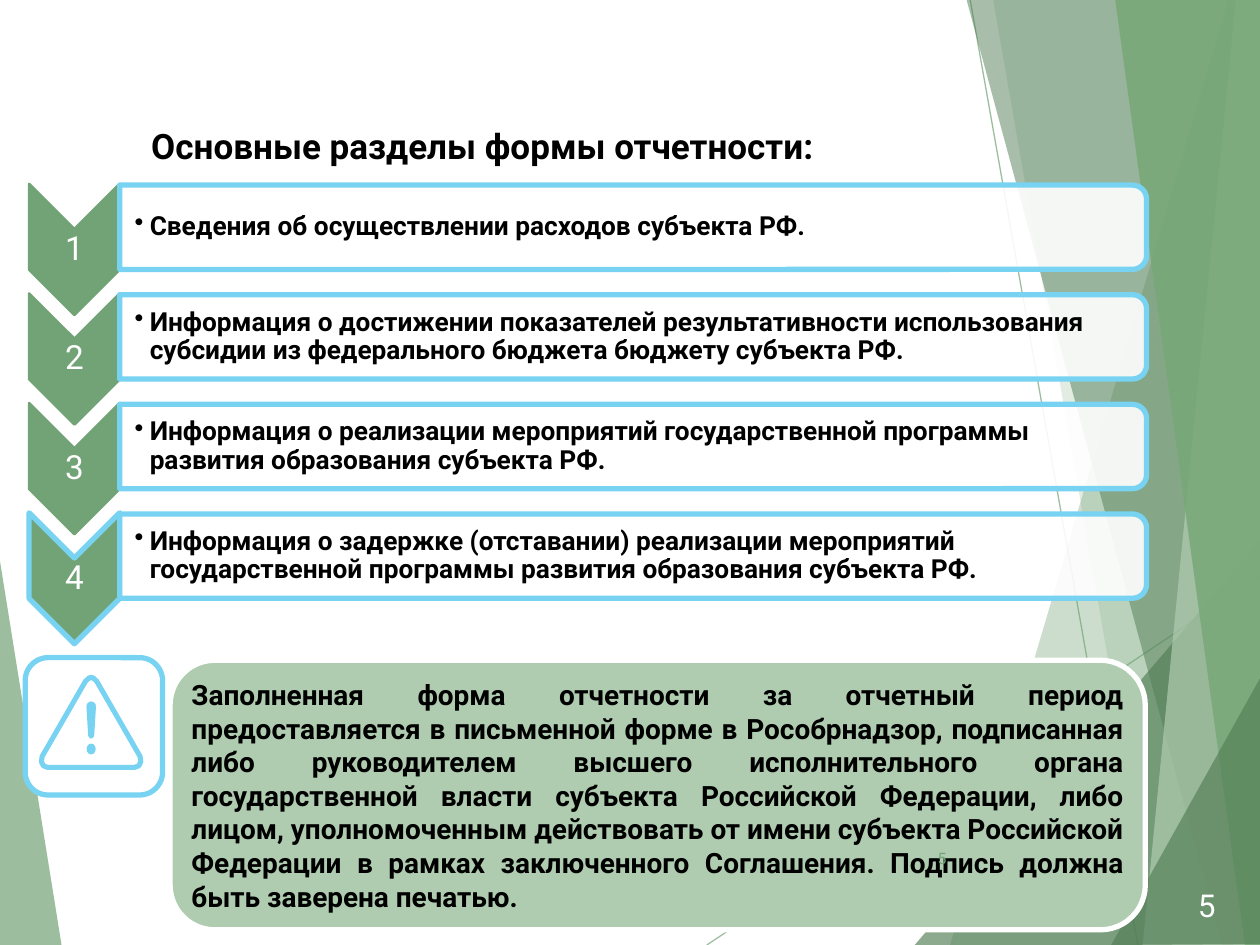
from pptx import Presentation
from pptx.dml.color import RGBColor
from pptx.enum.shapes import MSO_CONNECTOR, MSO_SHAPE
from pptx.enum.text import MSO_ANCHOR, PP_ALIGN
from pptx.oxml.ns import qn
from pptx.util import Pt
from lxml.etree import SubElement

FONT = "Roboto"
GREEN, DARK, PALE, LEAF = "72A376", "527E56", "B0CCB0", "76A776"
SKY, WHITE, BLACK = "77D3F1", "FFFFFF", "000000"

FACETS = [  # corner points, colour, opacity in percent
    ([(-0.7, 316.1), (35.3, 540.7), (-0.7, 540)], GREEN, 70),
    ([(702, 0), (542.9, 540), (721.4, 540.7), (720.7, 0.7)], GREEN, 36),
    ([(567.4, -0.7), (661.7, 540), (720.7, 540), (720.7, -0.7)], GREEN, 20),
    ([(522.7, 540), (720, 308.9), (720.7, 540)], DARK, 66),
    ([(552.2, -0.7), (698.4, 540), (720.7, 539.3), (720.7, -0.7)], DARK, 50),
    ([(706.3, -0.7), (653, 540), (720.7, 540), (720, -0.7)], PALE, 70),
    ([(637.2, -0.7), (711.4, 540), (721.4, 540), (720, -0.7)], LEAF, 82),
    ([(635, 540), (721.4, 385.2), (721.4, 539.3)], DARK, 66),
]
RAYS = [(403.9, 540, 720.7, 329), (554.4, 0, 650.2, 540)]

SECTIONS = [
    "Сведения об осуществлении расходов субъекта РФ.",
    "Информация о достижении показателей результативности использования "
    "субсидии из федерального бюджета бюджету субъекта РФ.",
    "Информация о реализации мероприятий государственной программы "
    "развития образования субъекта РФ.",
    "Информация о задержке (отставании) реализации мероприятий "
    "государственной программы развития образования субъекта РФ.",
]
NOTICE = (
    "Заполненная форма отчетности за отчетный период предоставляется в письменной "
    "форме в Рособрнадзор, подписанная либо руководителем высшего исполнительного "
    "органа государственной власти субъекта Российской Федерации, либо лицом, "
    "уполномоченным действовать от имени субъекта Российской Федерации в рамках "
    "заключенного Соглашения. Подпись должна быть заверена печатью."
)


def rgb(value):
    return RGBColor.from_string(value)


def set_opacity(shape, percent):
    """Apply opacity to every colour set so far on the shape."""
    for color in shape.element.spPr.iter(qn("a:srgbClr")):
        SubElement(color, qn("a:alpha")).set("val", str(percent * 1000))


def paint(shape, fill=None, line=None, width=3, opacity=100):
    shape.shadow.inherit = False
    if fill:
        shape.fill.solid()
        shape.fill.fore_color.rgb = rgb(fill)
        if opacity < 100:
            set_opacity(shape, opacity)
    else:
        shape.fill.background()
    if line:
        shape.line.color.rgb = rgb(line)
        shape.line.width = Pt(width)
    else:
        shape.line.fill.background()
    return shape


def add_box(page, kind, left, top, width, height):
    return page.shapes.add_shape(kind, Pt(left), Pt(top), Pt(width), Pt(height))


def add_turned(page, kind, left, top, width, height):
    """Add a shape turned by 90 degrees that fills the given box."""
    shift = (width - height) / 2
    shape = add_box(page, kind, left + shift, top - shift, height, width)
    shape.rotation = 90
    return shape


def add_polygon(page, points):
    first, *others = [(Pt(x), Pt(y)) for x, y in points]
    builder = page.shapes.build_freeform(*first)
    builder.add_line_segments(others, close=True)
    return builder.convert_to_shape()


def write(shape, text, size, color=BLACK, bold=False, align=PP_ALIGN.LEFT,
          anchor=MSO_ANCHOR.MIDDLE, insets=(7.2, 3.6, 7.2, 3.6), wrap=True):
    frame = shape.text_frame
    frame.word_wrap = wrap
    frame.vertical_anchor = anchor
    (frame.margin_left, frame.margin_top,
     frame.margin_right, frame.margin_bottom) = map(Pt, insets)
    para = frame.paragraphs[0]
    para.alignment = align
    span = para.add_run()
    span.text = text
    span.font.name, span.font.size, span.font.bold = FONT, Pt(size), bold
    span.font.color.rgb = rgb(color)
    return para


def add_text(page, box, text, size, **style):
    left, top, width, height = map(Pt, box)
    return write(page.shapes.add_textbox(left, top, width, height), text, size, **style)


def add_bullet(para, indent):
    props = para._p.get_or_add_pPr()
    props.set("marL", str(Pt(indent)))
    props.set("indent", str(-Pt(indent)))
    SubElement(props, qn("a:buChar")).set("char", "•")


def draw_backdrop(page):
    def draw_facets(facets):
        for points, color, opacity in facets:
            paint(add_polygon(page, points), color, opacity=opacity)

    draw_facets(FACETS[:1])
    for ray in RAYS:
        line = page.shapes.add_connector(MSO_CONNECTOR.STRAIGHT, *map(Pt, ray))
        line.line.color.rgb = rgb(GREEN)
        line.line.width = Pt(0.75)
        set_opacity(line, 70)
        SubElement(line.element.spPr, qn("a:effectLst"))
    draw_facets(FACETS[1:])


def place_title(page, left, top, width, height):
    title = page.shapes.title
    title.left, title.top, title.width, title.height = map(Pt, (left, top, width, height))
    write(title, "Основные разделы формы отчетности:", 20, bold=True,
          anchor=MSO_ANCHOR.TOP, wrap=False)


def draw_section(page, left, top, width, height, number, text, edge, edge_width):
    arrow_width, bar_height = 51.8, 48.2
    arrow = add_turned(page, MSO_SHAPE.CHEVRON, left, top, arrow_width, height)
    paint(arrow, GREEN, edge, edge_width)
    number_para = add_text(page, (left, top + arrow_width / 2, arrow_width, 23), str(number),
                           19, color=WHITE, align=PP_ALIGN.CENTER, insets=(0.7,) * 4)
    number_para.line_spacing = 0.9

    bar = (left + arrow_width, top + 0.7, width - arrow_width, bar_height)
    shape = add_turned(page, MSO_SHAPE.ROUND_2_SAME_RECTANGLE, *bar)
    paint(shape, WHITE, SKY, opacity=90)
    para = add_text(page, bar, text, 15, bold=True, insets=(8.6, 0.7, 3.6, 0.7))
    para.line_spacing = 0.9
    add_bullet(para, 8.6)


def draw_sections(page, left, top, width, height):
    step = 62.64
    for index, text in enumerate(SECTIONS):
        last = index == len(SECTIONS) - 1
        draw_section(page, left, top + index * step, width, height, index + 1, text,
                     SKY if last else GREEN, 3 if last else 1.5)


def draw_warning_sign(page, left, top, size):
    paint(add_box(page, MSO_SHAPE.ROUNDED_RECTANGLE, left, top, size, size), WHITE, SKY)
    middle = left + 37.7

    def mirrored(half):
        """Complete a symmetric outline from (distance from axis, depth) pairs."""
        return ([(middle - x, top + y) for x, y in half]
                + [(middle + x, top + y) for x, y in reversed(half)])

    triangle = [(1, 11.5), (3.2, 13.5), (28, 56.5), (28.4, 59.5), (27.3, 61.8), (25, 62.7)]
    paint(add_polygon(page, mirrored(triangle)), line=SKY, width=2.9)
    stroke = [(1, 25.2), (2.5, 26.5), (2.7, 28.5), (1.7, 44.8), (0.7, 46.1)]
    paint(add_polygon(page, mirrored(stroke)), SKY)
    paint(add_box(page, MSO_SHAPE.OVAL, middle - 2.6, top + 49.1, 5.2, 6.2), SKY)


def draw_notice(page, left, top, width, height):
    panel = add_box(page, MSO_SHAPE.ROUNDED_RECTANGLE, left, top, width, height)
    paint(panel, PALE, WHITE)
    add_text(page, (left + 4.3, top + 7.5, width - 8.6, height - 15), NOTICE, 16,
             bold=True, align=PP_ALIGN.JUSTIFY, insets=(7.9,) * 4)


def place_page_numbers(page):
    add_text(page, (507.6, 475.9, 40.3, 28.8), "5", 9, color=GREEN, align=PP_ALIGN.RIGHT)
    add_text(page, (677.5, 502.6, 24.5, 28.8), "5", 18, color=WHITE,
             anchor=MSO_ANCHOR.TOP, wrap=False)


def main():
    deck = Presentation()
    deck.slide_width, deck.slide_height = Pt(720), Pt(540)
    page = deck.slides.add_slide(deck.slide_layouts[5])
    draw_backdrop(page)
    place_title(page, 79.2, 67.7, 401, 31.7)
    draw_sections(page, 16.6, 105.1, 638.6, 74.9)
    draw_warning_sign(page, 14.4, 375.8, 78.5)
    draw_notice(page, 97.2, 377.3, 557.3, 154.1)
    place_page_numbers(page)
    deck.save("out.pptx")


if __name__ == "__main__":
    main()
